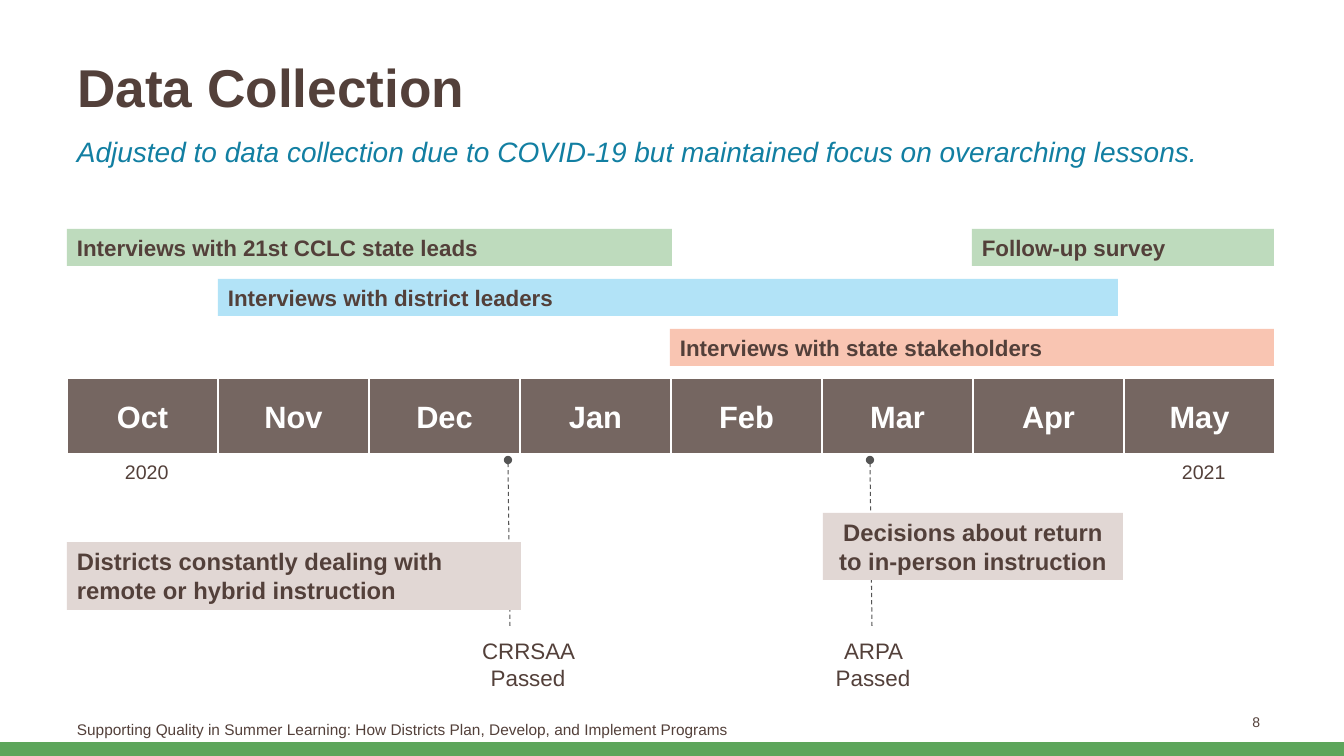
import lxml.etree
import pptx
import pptx.dml.color
import pptx.enum.dml
import pptx.enum.shapes
import pptx.enum.text
import pptx.oxml.ns
import pptx.util

PX = 914400 / 100.8
COLORS = {
    "brown": "53403A", "white": "FFFFFF", "teal": "127FA2", "footer_green": "5DA55B",
    "green": "BEDBBD", "blue": "B2E3F7", "salmon": "F9C5B2", "taupe": "E1D7D4",
    "marker": "424242",
}
ALIGN = pptx.enum.text.PP_ALIGN
ANCHOR = pptx.enum.text.MSO_ANCHOR
MONTHS = ["Oct", "Nov", "Dec", "Jan", "Feb", "Mar", "Apr", "May"]
ACTIVITIES = [
    ("Interviews with 21st CCLC state leads", 0, 0, 605, "green"),
    ("Follow-up survey", 905, 0, 302, "green"),
    ("Interviews with state stakeholders", 603, 2, 604, "salmon"),
    ("Interviews with district leaders", 151, 1, 900, "blue"),
]


def emu(*lengths):
    """Turn px lengths into EMU."""
    return [pptx.util.Emu(round(length * PX)) for length in lengths]


def rgb(color):
    """Look up a named colour."""
    return pptx.dml.color.RGBColor.from_string(COLORS[color])


def add_alpha(color_parent, percent):
    """Make the solid colour inside an element partly transparent."""
    srgb = color_parent.find(".//" + pptx.oxml.ns.qn("a:srgbClr"))
    alpha = lxml.etree.SubElement(srgb, pptx.oxml.ns.qn("a:alpha"))
    alpha.set("val", str(percent * 1000))


def write(shape, text, size, color="brown", bold=False, italic=False,
          align=ALIGN.LEFT, anchor=ANCHOR.TOP):
    """Fill a shape with evenly formatted text, one paragraph per line."""
    frame = shape.text_frame
    frame.text = text
    frame.word_wrap = True
    frame.auto_size = pptx.enum.text.MSO_AUTO_SIZE.NONE
    frame.vertical_anchor = anchor
    for paragraph in frame.paragraphs:
        paragraph.alignment = align
        font = paragraph.font
        font.name, font.size = "Arial", pptx.util.Pt(size)
        font.bold, font.italic = bold, italic
        font.color.rgb = rgb(color)


def add_label(slide, box, text, size, **style):
    """Place plain text in a box."""
    write(slide.shapes.add_textbox(*emu(*box)), text, size, **style)


def add_block(slide, box, fill, text, size, **style):
    """Place a filled rectangle with bold text."""
    block = slide.shapes.add_shape(pptx.enum.shapes.MSO_SHAPE.RECTANGLE, *emu(*box))
    block.shadow.inherit = False
    block.fill.solid()
    block.fill.fore_color.rgb = rgb(fill)
    block.line.fill.background()
    write(block, text, size, bold=True, **style)
    return block


def add_rule(slide, ends, color, width):
    """Draw a straight line without a shadow."""
    rule = slide.shapes.add_connector(pptx.enum.shapes.MSO_CONNECTOR.STRAIGHT, *emu(*ends))
    rule.line.color.rgb = rgb(color)
    rule.line.width = pptx.util.Pt(width)
    lxml.etree.SubElement(rule._element.spPr, pptx.oxml.ns.qn("a:effectLst"))
    return rule


def add_heading(slide, left, top, width):
    """Place the title and the italic line below it."""
    title = slide.shapes.title
    title.left, title.top, title.width, title.height = emu(left, top, width, 79)
    write(title, "Data Collection", 38, bold=True, anchor=ANCHOR.MIDDLE)
    add_label(slide, (left, top + 83, width, 60),
              "Adjusted to data collection due to COVID-19 but maintained focus on "
              "overarching lessons.", 20, color="teal", italic=True)


def add_law_marker(slide, x, top, height):
    """Draw a dashed line that hangs from a dot under the months."""
    marker = add_rule(slide, (x + 2, top + height, x, top), "marker", 0.75)
    marker.line.dash_style = pptx.enum.dml.MSO_LINE.DASH
    outline = marker.line._get_or_add_ln()
    add_alpha(outline, 90)
    dot = lxml.etree.SubElement(outline, pptx.oxml.ns.qn("a:tailEnd"))
    dot.set("type", "oval")


def add_activities(slide, left, top):
    """Place the data collection bars in their rows."""
    for name, offset, row, width, fill in ACTIVITIES:
        add_block(slide, (left + offset, top + 50 * row, width, 37), fill, name, 16)


def add_months(slide, left, top, width, height):
    """Place the row of months with the years below its ends."""
    step = width // len(MONTHS)
    for index, name in enumerate(MONTHS):
        month = add_block(slide, (left + index * step, top, step, height), "brown", name, 22,
                          color="white", align=ALIGN.CENTER, anchor=ANCHOR.MIDDLE)
        add_alpha(month._element.spPr, 80)
        month.line.color.rgb = rgb("white")
        month.line.width = pptx.util.Pt(1)
    for year, offset in (("2020", 48), ("2021", width - 103)):
        add_label(slide, (left + offset, top + height + 1, 74, 34), year, 14)


def add_events(slide, left, top):
    """Place the passed laws and the district context notes."""
    for law, offset, width in (("CRRSAA Passed", 394, 134), ("ARPA Passed", 757, 98)):
        add_label(slide, (left + offset, top + 119, width, 65), law, 16, align=ALIGN.CENTER)
    add_block(slide, (left + 756, top, 300, 67), "taupe",
              "Decisions about return\nto in-person instruction", 17, align=ALIGN.CENTER)
    add_block(slide, (left, top + 29, 454, 68), "taupe",
              "Districts constantly dealing with remote or hybrid instruction", 17)


def add_footer(slide, left, top, right):
    """Place the report name and the slide number."""
    add_label(slide, (left, top, 706, 40),
              "Supporting Quality in Summer Learning: How Districts Plan, Develop, "
              "and Implement Programs", 11, anchor=ANCHOR.MIDDLE)
    add_label(slide, (right - 302, top - 7, 302, 40), "8", 10,
              align=ALIGN.RIGHT, anchor=ANCHOR.MIDDLE)


def main():
    """Build the slide and save it."""
    deck = pptx.Presentation()
    deck.slide_width, deck.slide_height = emu(1344, 756)
    slide = deck.slides.add_slide(deck.slide_layouts[5])
    add_rule(slide, (0, 749, 1344, 749), "footer_green", 10)
    for x in (508, 870):
        add_law_marker(slide, x, 460, 166)
    add_heading(slide, 67, 47, 1168)
    add_activities(slide, 67, 229)
    add_months(slide, 67, 378, 1208, 76)
    add_events(slide, 67, 513)
    add_footer(slide, 67, 709, 1270)
    deck.save("out.pptx")


if __name__ == "__main__":
    main()
